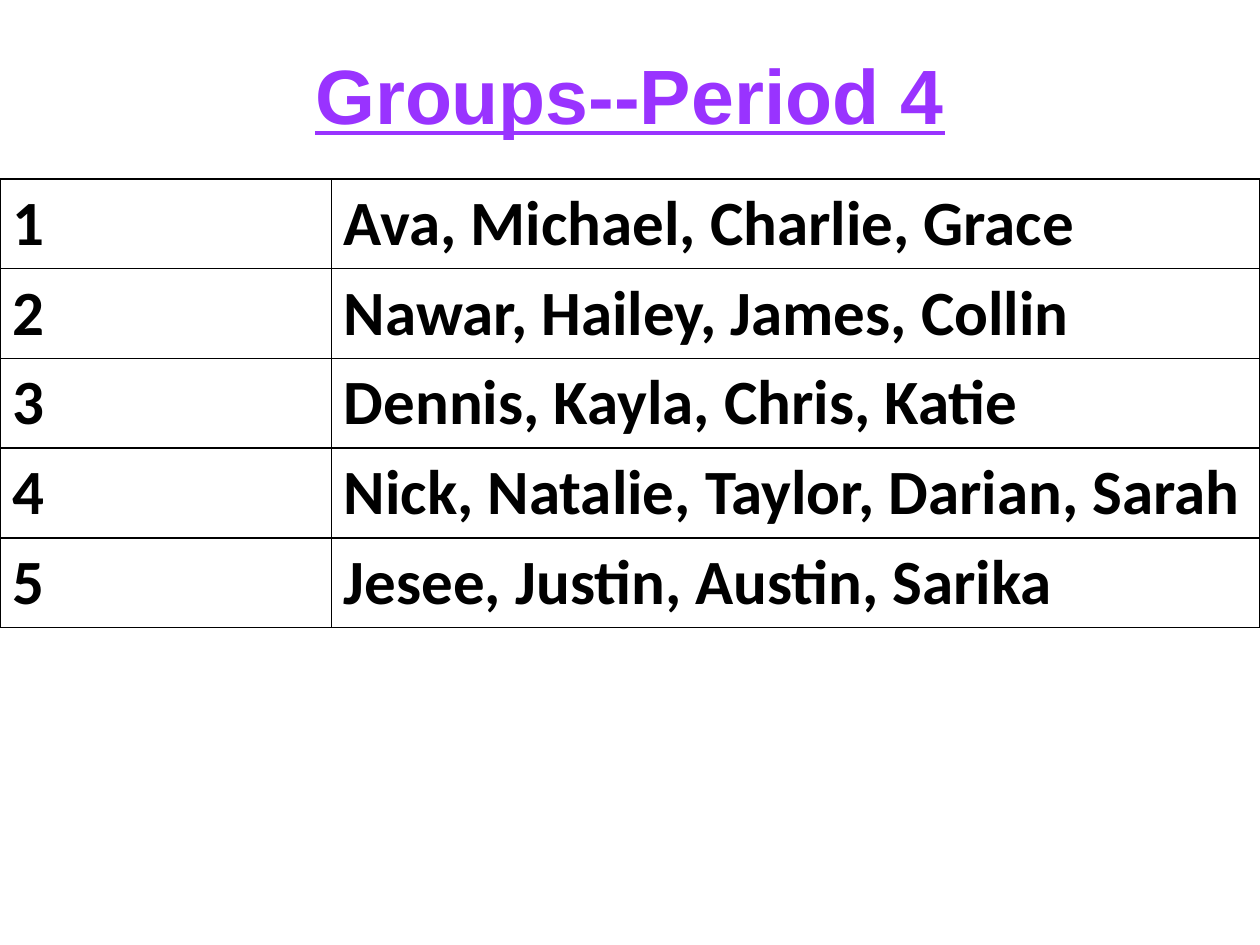
from lxml import etree
from pptx import Presentation, util as u
from pptx.dml.color import RGBColor
from pptx.enum import text
from pptx.oxml.ns import qn

COLORS = {"heading": "9933FF", "ink": "000000", "border": "000000"}
GROUPS = [
    "Ava, Michael, Charlie, Grace",
    "Nawar, Hailey, James, Collin",
    "Dennis, Kayla, Chris, Katie",
    "Nick, Natalie, Taylor, Darian, Sarah",
    "Jesee, Justin, Austin, Sarika",
]
JUSTIFIED_GROUP = 3


def write(frame, words, *, font, size, color, align=None, underline=None):
    paragraph = frame.paragraphs[0]
    paragraph.alignment = align
    run = paragraph.add_run()
    run.text = words
    run.font.name = font
    run.font.size = u.Pt(size)
    run.font.bold = True
    run.font.underline = underline
    run.font.color.rgb = RGBColor.from_string(COLORS[color])


class GroupSlide:
    heading_style = dict(font="Arial", size=44, color="heading", underline=True)
    cell_style = dict(font="Calibri", size=36, color="ink")

    def __init__(self, deck):
        self.slide = deck.slides.add_slide(deck.slide_layouts[5])

    def heading(self, words, left, top, width, height):
        title = self.slide.shapes.title
        title.left, title.top = u.Inches(left), u.Inches(top)
        title.width, title.height = u.Inches(width), u.Inches(height)
        title.text_frame.word_wrap = True
        title.text_frame.vertical_anchor = text.MSO_ANCHOR.MIDDLE
        write(title.text_frame, words, align=text.PP_ALIGN.CENTER, **self.heading_style)

    def border(self, cell, points=1):
        properties = cell._tc.get_or_add_tcPr()
        for position, side in enumerate(("lnL", "lnR", "lnT", "lnB")):
            line = etree.Element(qn(f"a:{side}"), w=str(u.Pt(points)))
            fill = etree.SubElement(line, qn("a:solidFill"))
            etree.SubElement(fill, qn("a:srgbClr"), val=COLORS["border"])
            properties.insert(position, line)

    def roster(self, groups, left, top, widths, row_height):
        roster = self.slide.shapes.add_table(
            len(groups), len(widths), u.Inches(left), u.Inches(top),
            u.Inches(sum(widths)), u.Inches(row_height * len(groups)),
        ).table
        roster.first_row = roster.horz_banding = False
        for column, width in zip(roster.columns, widths):
            column.width = u.Inches(width)
        for number, (row, members) in enumerate(zip(roster.rows, groups), 1):
            row.height = u.Inches(row_height)
            members_align = text.PP_ALIGN.JUSTIFY if number == JUSTIFIED_GROUP else None
            entries = ((str(number), None), (members, members_align))
            for cell, (words, align) in zip(row.cells, entries):
                cell.fill.background()
                self.border(cell)
                write(cell.text_frame, words, align=align, **self.cell_style)


def main():
    deck = Presentation()
    deck.slide_width, deck.slide_height = u.Inches(10), u.Inches(7.5)
    period = GroupSlide(deck)
    period.roster(GROUPS, 0, 1.42, (2.63, 7.37), 0.71)
    period.heading("Groups--Period 4", 0, 0.02, 10, 1.45)
    deck.save("out.pptx")


if __name__ == "__main__":
    main()
